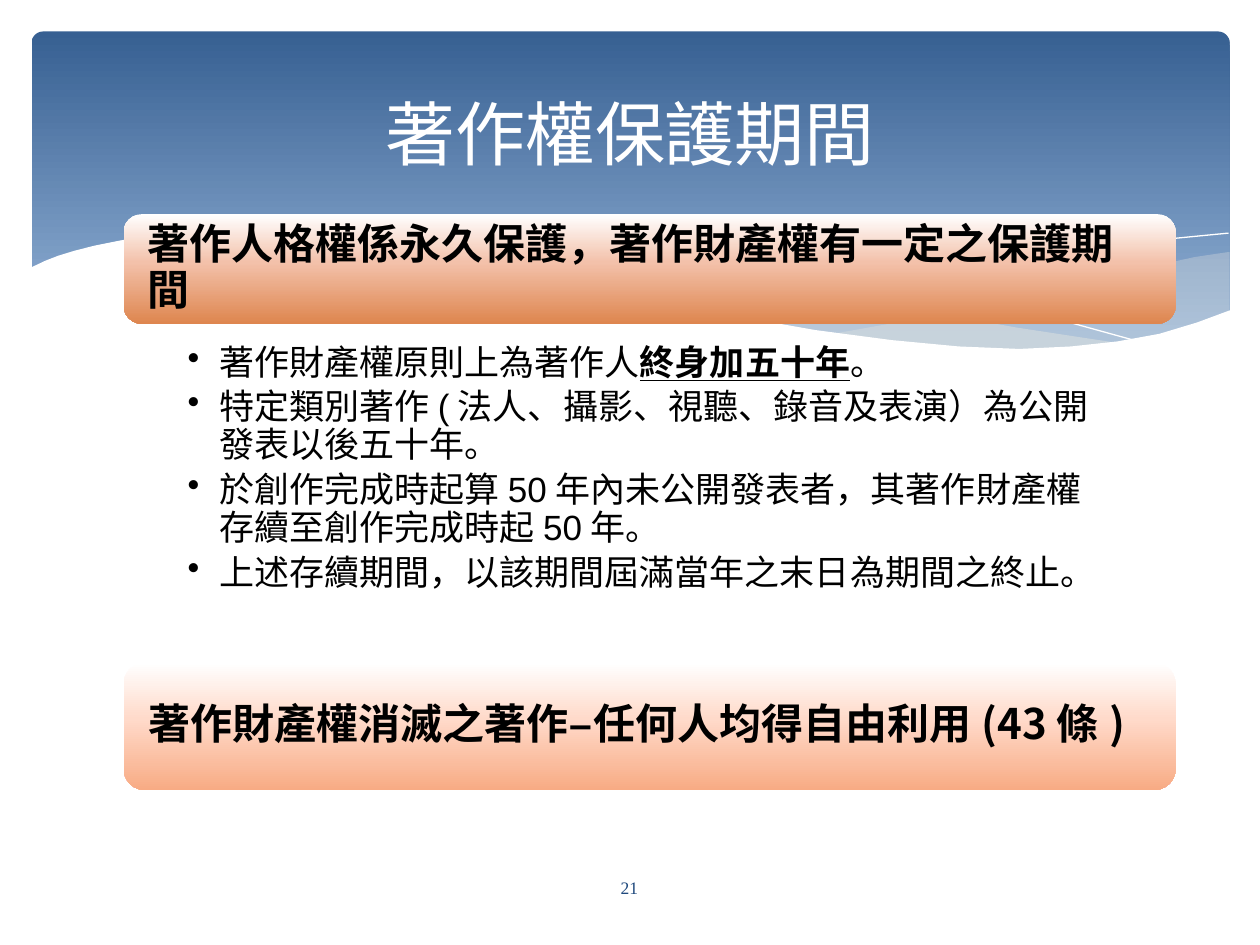
import pptx
import pptx.dml.color
import pptx.enum.shapes
import pptx.enum.text
import pptx.oxml.ns
import pptx.oxml.xmlchemy
import pptx.util

Pt = pptx.util.Pt
qn = pptx.oxml.ns.qn
Align = pptx.enum.text.PP_ALIGN
Anchor = pptx.enum.text.MSO_ANCHOR
SANS = "Noto Sans CJK SC"

RIGHT = [
    (702, 144), (682.6, 146.9), (663.1, 151.2), (641.5, 155.5), (619.9, 160.6),
    (579.6, 170.6), (542.2, 178.6), (508.3, 185), (475.9, 190.8), (497.5, 193.7),
    (517, 196.6), (536.4, 198), (562.3, 199.4), (586.1, 200.2), (614.9, 198.7),
    (640.1, 195.8), (663.1, 190.8), (683.3, 185), (702.7, 177.8), (702.7, 144)]
MIDDLE = [
    (643, 196.6), (623.5, 193.7), (581, 187.2), (533.5, 178.6), (481, 166.3),
    (441.4, 157), (409.7, 149.8), (379.4, 144), (352.1, 139.7), (317.5, 136.1),
    (287.3, 133.9), (259.9, 133.9), (236.2, 134.6), (205.9, 137.5), (232.6, 141.1),
    (260.6, 146.2), (290.9, 151.9), (323.3, 159.8), (381.6, 172.8), (432.7, 183.6),
    (468, 190.1), (500.4, 194.4), (529.9, 198), (556.6, 200.2), (589, 200.9),
    (617, 199.4)]
LONG = [
    (222.5, 140.4), (236.2, 138.2), (254.2, 136.1), (288.7, 134.6), (324, 135.4),
    (367.2, 138.2), (419, 144), (478.8, 153.4), (547.2, 167.8), (598.3, 180.7),
    (653, 195.8)]
SHORT = [
    (441.4, 185), (469.4, 177.1), (500.4, 169.2), (538.6, 160.6), (580.3, 151.2),
    (623.5, 143.3), (665.3, 136.8), (702, 133.2)]
FRONT = [
    (703.4, 177.1), (684, 184.3), (662.4, 190.8), (638.6, 195.1), (612, 198),
    (582.5, 199.4), (547.9, 198), (509.8, 194.4), (465.8, 188.6), (416.9, 180),
    (362.2, 167.8), (321.8, 158.4), (281.5, 149), (244.1, 141.8), (210.2, 137.5),
    (180, 133.9), (151.9, 132.5), (127.4, 132.5), (105.1, 133.2), (85.7, 134.6),
    (68.4, 137.5), (54, 140.4), (42.5, 143.3), (33.1, 146.2), (25.9, 149),
    (16.6, 153.4), (16.6, 236.9), (703.4, 236.9)]

RULES = [
    [("著作財產權原則上為著作人", False), ("終身加五十年", True), ("。", False)],
    [("特定類別著作(法人、攝影、視聽、錄音及表演）為公開發表以後五十年。", False)],
    [("於創作完成時起算50年內未公開發表者，其著作財產權存續至創作完成時起50年。", False)],
    [("上述存續期間，以該期間屆滿當年之末日為期間之終止。", False)],
]


def tint(text):
    """Return the colour of a hex string."""
    return pptx.dml.color.RGBColor.from_string(text)


def child(node, tag, **pairs):
    """Append a drawing element with attributes."""
    item = pptx.oxml.xmlchemy.OxmlElement(tag)
    for key, value in pairs.items():
        item.set(key, str(value))
    node.append(item)
    return item


def style(para, size, name, color, bold=False, east=SANS):
    """Set the font of a paragraph."""
    font = para.font
    font.size, font.name, font.bold = Pt(size), name, bold
    font.color.rgb = tint(color)
    base = para._p.pPr.find(qn("a:defRPr"))
    child(base, "a:ea", typeface=east)


def setup(frame, pads, anchor=Anchor.MIDDLE):
    """Set wrapping, margins and anchor of a text frame."""
    frame.word_wrap = True
    frame.auto_size = pptx.enum.text.MSO_AUTO_SIZE.NONE
    frame.vertical_anchor = anchor
    left, top, right, low = map(Pt, pads)
    frame.margin_left, frame.margin_right = left, right
    frame.margin_top, frame.margin_bottom = top, low


def panel(slide, box, stops, bend=0.1667):
    """Add a rounded panel with a downward gradient."""
    kind = pptx.enum.shapes.MSO_SHAPE.ROUNDED_RECTANGLE
    shape = slide.shapes.add_shape(kind, *map(Pt, box))
    shape.adjustments[0] = bend
    shape.shadow.inherit = False
    shape.line.fill.background()
    shape.fill.gradient()
    shape.fill.gradient_angle = 270
    ramp = next(shape._element.spPr.iter(qn("a:gsLst")))
    for old in list(ramp):
        ramp.remove(old)
    for spot, color in stops:
        stop = child(ramp, "a:gs", pos=spot * 1000)
        child(stop, "a:srgbClr", val=color)
    return shape


def curve(slide, dots, fill=None, alpha=100):
    """Add a filled wave, or an open white line without a fill."""
    grid = [(x * 10, y * 10) for x, y in dots]
    form = slide.shapes.build_freeform(*grid[0], scale=float(Pt(0.1)))
    form.add_line_segments(grid[1:], close=fill is not None)
    shape = form.convert_to_shape()
    shape.shadow.inherit = False
    if fill:
        shape.fill.solid()
        shape.fill.fore_color.rgb = tint(fill)
        shape.line.fill.background()
        color = next(shape._element.spPr.iter(qn("a:srgbClr")))
        child(color, "a:alpha", val=alpha * 1000)
    else:
        shape.fill.background()
        shape.line.color.rgb = tint("FFFFFF")
        shape.line.width = Pt(0)


def banner(slide, top, height, stops, parts):
    """Add a heading panel; dashes take their own font."""
    shape = panel(slide, (70.6, top, 601.2, height), stops)
    setup(shape.text_frame, (10.8, 7.2, 10.8, 7.2))
    para = shape.text_frame.paragraphs[0]
    para.alignment, para.line_spacing = Align.LEFT, 0.9
    style(para, 24, SANS, "000000", True)
    for part in parts:
        run = para.add_run()
        run.text = part
        if part == "—":
            run.font.name = "Cabin"
            child(run._r.rPr, "a:ea", typeface="Cabin")


def bullets(slide, box, items):
    """Add the bulleted rules."""
    frame = slide.shapes.add_textbox(*map(Pt, box)).text_frame
    setup(frame, (19.4, 2, 11.5, 2), Anchor.TOP)
    for i, item in enumerate(items):
        para = frame.add_paragraph() if i else frame.paragraphs[0]
        style(para, 20, "Arial", "000000")
        para.line_spacing, para.space_after = 0.9, Pt(4)
        props = para._p.pPr
        props.set("marL", str(Pt(18)))
        props.set("indent", str(Pt(-18)))
        mark = child(props, "a:buChar", char="•")
        props.find(qn("a:defRPr")).addprevious(mark)
        for text, strong in item:
            run = para.add_run()
            run.text = text
            if strong:
                run.font.bold = run.font.underline = True


def label(shape, box, text, size, name, color):
    """Place a shape and fill it with one centred line."""
    shape.left, shape.top, shape.width, shape.height = map(Pt, box)
    setup(shape.text_frame, (7.2, 3.6, 7.2, 3.6))
    para = shape.text_frame.paragraphs[0]
    para.text, para.alignment = text, Align.CENTER
    style(para, size, name, color)


def main():
    """Build the slide and save it."""
    deck = pptx.Presentation()
    deck.slide_width, deck.slide_height = Pt(720), Pt(540)
    slide = deck.slides.add_slide(deck.slide_layouts[5])
    panel(slide, (18, 18, 684.7, 194.4), [(0, "376092"), (90, "95B3D7")], 0.034)
    curve(slide, RIGHT, "EEECE1", 29)
    curve(slide, MIDDLE, "EEECE1", 40)
    curve(slide, LONG)
    curve(slide, SHORT)
    curve(slide, FRONT, "FFFFFF")
    banner(slide, 122.4, 62.6, [(0, "FFFFFF"), (44, "F3C1AA"), (100, "DE864F")],
           ["著作人格權係永久保護，著作財產權有一定之保護期間"])
    bullets(slide, (87.8, 195.1, 550.1, 180), RULES)
    banner(slide, 378.7, 72.7, [(0, "FFFFFF"), (44, "FFDACA"), (100, "F8AB84")],
           ["著作財產權消滅之著作", "—", "任何人均得自由利用(43條)"])
    title = slide.shapes.title
    label(title, (36, 26.6, 648, 98.6), "著作權保護期間", 40, "Cabin", "FFFFFF")
    slide.shapes._spTree.append(title._element)
    box = (313.9, 492.5, 91.4, 28.8)
    label(slide.shapes.add_textbox(*map(Pt, box)), box, "21", 10,
          "Times New Roman", "1F497D")
    deck.save("out.pptx")


if __name__ == "__main__":
    main()
